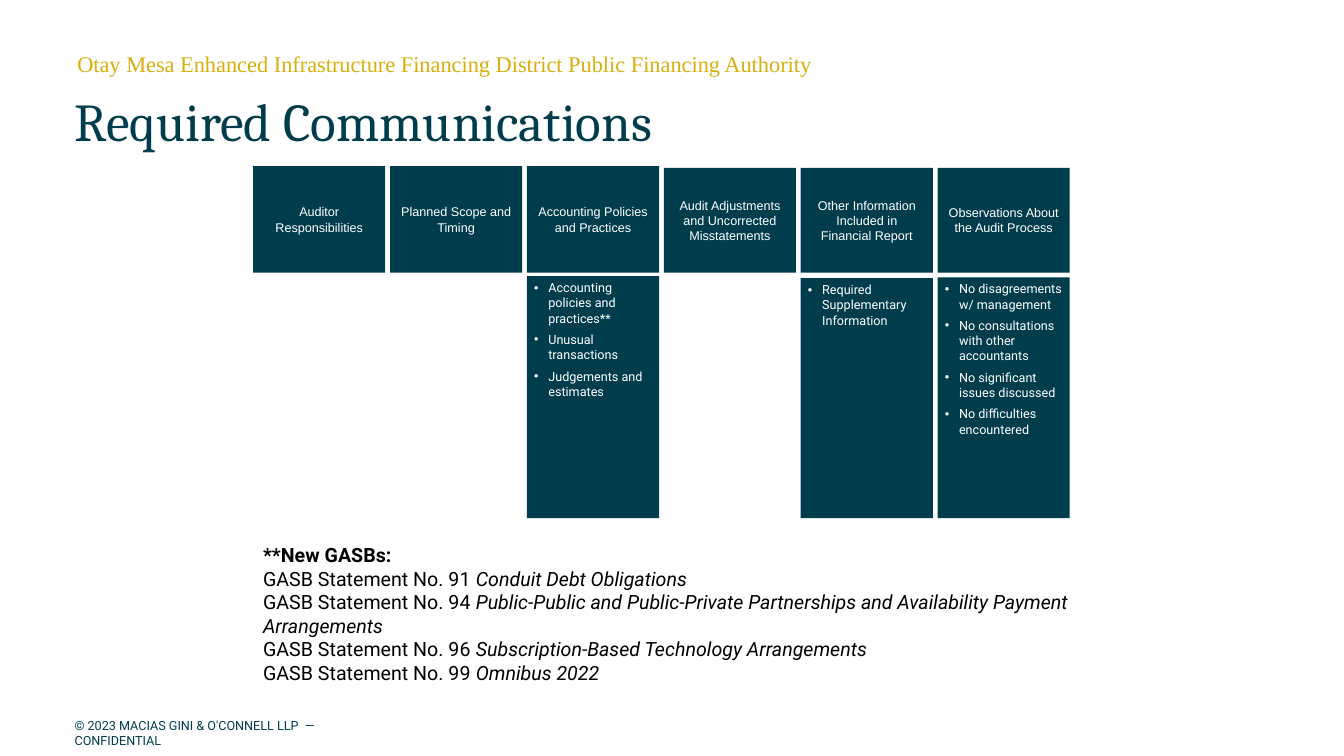
from lxml import etree
from pptx import Presentation
from pptx import util as u
from pptx.dml.color import RGBColor
from pptx.enum import shapes, text
from pptx.oxml.ns import qn

TEAL = RGBColor(0x00, 0x3D, 0x4C)
GOLD = RGBColor(0xD7, 0xB0, 0x0D)
WHITE = RGBColor(0xFF, 0xFF, 0xFF)
BLACK = RGBColor(0x00, 0x00, 0x00)

COLUMN_LEFT, COLUMN_PITCH, COLUMN_WIDTH = 6.38, 3.45, 3.33
HEADING_BOTTOM, DETAIL_BOTTOM = 6.87, 13.06
COLUMNS = [
    (4.19, "Auditor Responsibilities", None, []),
    (4.19, "Planned Scope and Timing", None, []),
    (4.19, "Accounting Policies and Practices", 6.96,
     ["Accounting policies and practices**", "Unusual transactions",
      "Judgements and estimates"]),
    (4.23, "Audit Adjustments and Uncorrected Misstatements", None, []),
    (4.23, "Other Information Included in\nFinancial Report", 7.01,
     ["Required Supplementary Information"]),
    (4.23, "Observations About the Audit Process", 6.99,
     ["No disagreements w/ management", "No consultations with other accountants",
      "No significant issues discussed", "No difficulties encountered"]),
]
STATEMENTS = [
    (91, "Conduit Debt Obligations"),
    (94, "Public-Public and Public-Private Partnerships and Availability Payment Arrangements"),
    (96, "Subscription-Based Technology Arrangements"),
    (99, "Omnibus 2022"),
]


def assign(target, values):
    for name, value in values.items():
        setattr(target, name, value)


class CommunicationsSlide:
    heading_style = {"name": "Arial", "size": u.Pt(9)}
    detail_style = {"name": "Roboto", "size": u.Pt(9)}
    panel_margins = {
        "margin_left": u.Cm(0.18), "margin_right": u.Cm(0.18),
        "margin_top": u.Cm(0.1), "margin_bottom": u.Cm(0.1),
    }

    def __init__(self, deck):
        self.slide = deck.slides.add_slide(deck.slide_layouts[6])

    def fill_text(self, frame, lines, font, color, **layout):
        for index, line in enumerate(lines):
            paragraph = frame.paragraphs[0] if index == 0 else frame.add_paragraph()
            assign(paragraph, layout)
            for content, emphasis in line:
                run = paragraph.add_run()
                run.text = content
                assign(run.font, {**font, **emphasis})
                run.font.color.rgb = color

    def label(self, box, lines, font, color, anchor=text.MSO_ANCHOR.TOP, **layout):
        frame = self.slide.shapes.add_textbox(*map(u.Cm, box)).text_frame
        assign(frame, {"word_wrap": True, "vertical_anchor": anchor})
        self.fill_text(frame, lines, font, color, **layout)

    def panel(self, left, top, bottom, anchor):
        panel = self.slide.shapes.add_shape(
            shapes.MSO_SHAPE.RECTANGLE,
            *map(u.Cm, (left, top, COLUMN_WIDTH, bottom - top)))
        panel.shadow.inherit = False
        panel.fill.solid()
        panel.fill.fore_color.rgb = TEAL
        panel.line.fill.background()
        assign(panel.text_frame, {"word_wrap": True, "vertical_anchor": anchor,
                                  **self.panel_margins})
        return panel.text_frame

    def heading(self, left, top, caption):
        frame = self.panel(left, top, HEADING_BOTTOM, text.MSO_ANCHOR.MIDDLE)
        lines = [[(line, {})] for line in caption.split("\n")]
        self.fill_text(frame, lines, self.heading_style, WHITE,
                       alignment=text.PP_ALIGN.CENTER)

    def details(self, left, top, items):
        frame = self.panel(left, top, DETAIL_BOTTOM, text.MSO_ANCHOR.TOP)
        self.fill_text(frame, [[(item, {})] for item in items], self.detail_style, WHITE,
                       alignment=text.PP_ALIGN.LEFT, space_after=u.Pt(4.5))
        for paragraph in frame.paragraphs:
            self.bullet(paragraph)

    def bullet(self, paragraph):
        properties = paragraph._p.get_or_add_pPr()
        indent = u.Cm(0.36)
        properties.set("marL", str(indent))
        properties.set("indent", str(-indent))
        color = etree.SubElement(properties, qn("a:buClr"))
        etree.SubElement(color, qn("a:srgbClr"), val=str(WHITE))
        etree.SubElement(properties, qn("a:buFont"), typeface="Arial")
        etree.SubElement(properties, qn("a:buChar"), char="•")


def main():
    deck = Presentation()
    assign(deck, {"slide_width": u.Cm(33.87), "slide_height": u.Cm(19.05)})
    page = CommunicationsSlide(deck)

    page.label((1.7, 1.3, 19.96, 1.17),
               [[("Otay Mesa Enhanced Infrastructure Financing District "
                  "Public Financing Authority", {})]],
               {"name": "Times New Roman", "size": u.Pt(16)}, GOLD, line_spacing=0.75)
    page.label((1.63, 1.91, 29.21, 2.06), [[("Required Communications", {})]],
               {"name": "Cambria", "size": u.Pt(38)}, TEAL,
               anchor=text.MSO_ANCHOR.MIDDLE, line_spacing=1.1)

    for index, (heading_top, caption, detail_top, items) in enumerate(COLUMNS):
        left = COLUMN_LEFT + index * COLUMN_PITCH
        page.heading(left, heading_top, caption)
        if items:
            page.details(left, detail_top, items)

    notes = [[("**New GASBs:", {"bold": True})]]
    notes += [[(f"GASB Statement No. {number} ", {}), (title, {"italic": True})]
              for number, title in STATEMENTS]
    page.label((6.38, 13.56, 22.89, 3.25), notes,
               {"name": "Roboto", "size": u.Pt(14)}, BLACK)
    page.label((1.63, 17.96, 8.71, 0.64),
               [[("© 2023 MACIAS GINI & O'CONNELL LLP  —  CONFIDENTIAL", {})]],
               page.detail_style, TEAL)
    deck.save("out.pptx")


if __name__ == "__main__":
    main()
